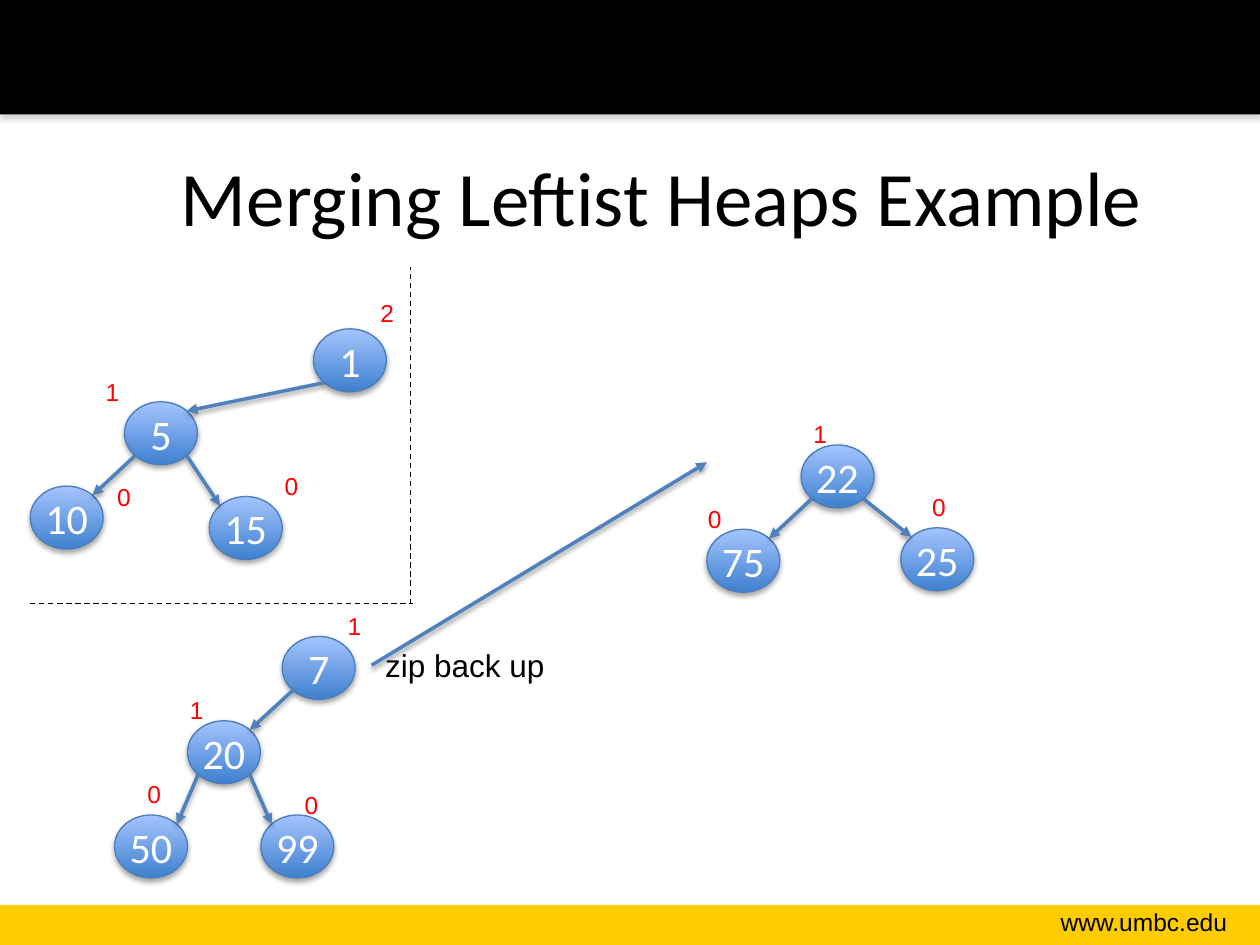
from collections import namedtuple
from dataclasses import dataclass
from math import sqrt

from lxml.etree import SubElement
from pptx import Presentation
from pptx.dml.color import RGBColor as RGB
from pptx.enum.dml import MSO_LINE
from pptx.enum.shapes import MSO_CONNECTOR, MSO_SHAPE
from pptx.enum.text import MSO_ANCHOR, MSO_AUTO_SIZE, PP_ALIGN
from pptx.oxml.ns import qn
from pptx.util import Cm, Pt


@dataclass(frozen=True)
class Theme:
    black: str = "000000"
    gold: str = "FFCC00"
    white: str = "FFFFFF"
    rank: str = "FF0000"
    node_bottom: str = "3F80CE"
    node_top: str = "A4C4FF"
    node_outline: str = "4B7EBC"
    edge: str = "4F81BD"
    bar_shadow: str = "808080"
    heading_font: str = "Calibri"
    body_font: str = "Arial"
    title_size: int = 44
    key_size: int = 24
    note_size: int = 18
    small_size: int = 14


Node = namedtuple("Node", "left top rank rank_left rank_top")

SLIDE_W, SLIDE_H = 25.4, 19.05
NODE_W, NODE_H = 1.47, 1.27

# Positions in centimetres, by key
HEAP_NODES = {
    1: Node(6.32, 6.63, 2, 7.42, 5.89),
    5: Node(2.51, 8.1, 1, 1.88, 7.47),
    10: Node(0.61, 9.8, 0, 2.11, 9.6),
    15: Node(4.22, 10.01, 0, 5.49, 9.37),
    7: Node(5.69, 12.83, 1, 6.76, 12.19),
    20: Node(3.78, 14.53, 1, 3.58, 13.89),
    50: Node(2.31, 16.43, 0, 2.72, 15.57),
    99: Node(5.26, 16.43, 0, 5.89, 15.8),
    22: Node(16.15, 8.97, 1, 16.15, 8.33),
    75: Node(14.25, 10.67, 0, 14.02, 10.03),
    25: Node(18.16, 10.64, 0, 18.54, 9.8),
}
PARENT_CHILD = [(1, 5), (5, 10), (5, 15), (7, 20), (20, 50), (20, 99),
                (22, 75), (22, 25)]


def rim_point(node, side, end):
    """Point on the node's diagonal; side and end are -1 or 1 for left/right and top/bottom."""
    reach = 1 / sqrt(2)
    return (node.left + NODE_W / 2 * (1 + side * reach),
            node.top + NODE_H / 2 * (1 + end * reach))


def add_shadow(effects, color, opacity, distance):
    shadow = SubElement(effects, qn("a:outerShdw"), blurRad=str(Pt(3.1)),
                        dist=str(Pt(distance)), dir="5400000", rotWithShape="0")
    tint = SubElement(shadow, qn("a:srgbClr"), val=color)
    SubElement(tint, qn("a:alpha"), val=str(opacity * 1000))


class SlideBuilder:
    def __init__(self, slide, theme):
        self.shapes = slide.shapes
        self.theme = theme

    def add_run(self, frame, text, size, font, color, align):
        paragraph = frame.paragraphs[0]
        paragraph.alignment = align
        run = paragraph.add_run()
        run.text = text
        run.font.size = Pt(size)
        run.font.name = font
        run.font.color.rgb = RGB.from_string(color)

    def shape(self, preset, left, top, width, height, shadow=None):
        shape = self.shapes.add_shape(preset, Cm(left), Cm(top), Cm(width), Cm(height))
        shape.shadow.inherit = False
        if shadow:
            add_shadow(shape._element.spPr.find(qn("a:effectLst")), shadow, 35, 1.8)
        return shape

    def bar(self, top, height, color, shadow=None):
        bar = self.shape(MSO_SHAPE.RECTANGLE, 0, top, SLIDE_W, height, shadow)
        bar.fill.solid()
        bar.fill.fore_color.rgb = RGB.from_string(color)
        bar.line.fill.background()

    def text(self, text, left, top, width, height, size, font=None, color=None,
             align=PP_ALIGN.LEFT, wrap=True, anchor=MSO_ANCHOR.TOP,
             fit=MSO_AUTO_SIZE.SHAPE_TO_FIT_TEXT):
        frame = self.shapes.add_textbox(Cm(left), Cm(top), Cm(width), Cm(height)).text_frame
        frame.word_wrap = wrap
        frame.auto_size = fit
        frame.vertical_anchor = anchor
        self.add_run(frame, text, size, font or self.theme.body_font,
                     color or self.theme.black, align)

    def node(self, key, node):
        theme = self.theme
        circle = self.shape(MSO_SHAPE.OVAL, node.left, node.top, NODE_W, NODE_H, theme.black)
        circle.fill.gradient()
        circle.fill.gradient_angle = 90
        for stop, color in zip(circle.fill.gradient_stops, (theme.node_bottom, theme.node_top)):
            stop.color.rgb = RGB.from_string(color)
        circle.line.color.rgb = RGB.from_string(theme.node_outline)
        circle.line.width = Pt(0.75)
        frame = circle.text_frame
        frame.word_wrap = False
        frame.vertical_anchor = MSO_ANCHOR.MIDDLE
        self.add_run(frame, str(key), theme.key_size, theme.heading_font, theme.white,
                     PP_ALIGN.CENTER)

    def rank(self, node):
        """Null path length beside a node."""
        self.text(str(node.rank), node.rank_left, node.rank_top, 0.74, 0.86,
                  self.theme.small_size, color=self.theme.rank)

    def line(self, start, end, color, width):
        line = self.shapes.add_connector(MSO_CONNECTOR.STRAIGHT,
                                         *(Cm(value) for value in (*start, *end)))
        line.line.color.rgb = RGB.from_string(color)
        line.line.width = Pt(width)
        effects = SubElement(line._element.spPr, qn("a:effectLst"))
        return line, effects

    def arrow(self, start, end):
        arrow, effects = self.line(start, end, self.theme.edge, 2)
        SubElement(arrow._element.spPr.find(qn("a:ln")), qn("a:tailEnd"), type="triangle")
        add_shadow(effects, self.theme.black, 38, 1.6)

    def divider(self, start, end):
        divider, _ = self.line(start, end, self.theme.black, 0.75)
        divider.line.dash_style = MSO_LINE.DASH

    def edge(self, parent, child):
        side = 1 if child.left > parent.left else -1
        self.arrow(rim_point(parent, side, 1), rim_point(child, -side, -1))


def main():
    deck = Presentation()
    deck.slide_width, deck.slide_height = Cm(SLIDE_W), Cm(SLIDE_H)
    theme = Theme()
    builder = SlideBuilder(deck.slides.add_slide(deck.slide_layouts[6]), theme)

    builder.bar(18.24, 0.81, theme.gold)
    builder.bar(0, 2.31, theme.black, shadow=theme.bar_shadow)
    builder.text("www.umbc.edu", 19.94, 18.16, 5.05, 0.86, theme.small_size,
                 align=PP_ALIGN.RIGHT)
    builder.text("Merging Leftist Heaps Example", 1.91, 2.36, 22.86, 3.18, theme.title_size,
                 theme.heading_font, align=PP_ALIGN.CENTER, anchor=MSO_ANCHOR.MIDDLE,
                 fit=MSO_AUTO_SIZE.NONE)

    for key, node in HEAP_NODES.items():
        builder.node(key, node)
    for parent, child in PARENT_CHILD:
        builder.edge(HEAP_NODES[parent], HEAP_NODES[child])
    for node in HEAP_NODES.values():
        builder.rank(node)

    builder.divider((0.61, 12.17), (8.33, 12.17))
    builder.divider((8.28, 12.17), (8.28, 5.38))
    builder.text("zip back up", 7.49, 12.9, 3.76, 1.02, theme.note_size,
                 align=PP_ALIGN.CENTER, wrap=False)
    builder.arrow((7.49, 13.41), (14.25, 9.32))

    deck.save("out.pptx")


if __name__ == "__main__":
    main()
